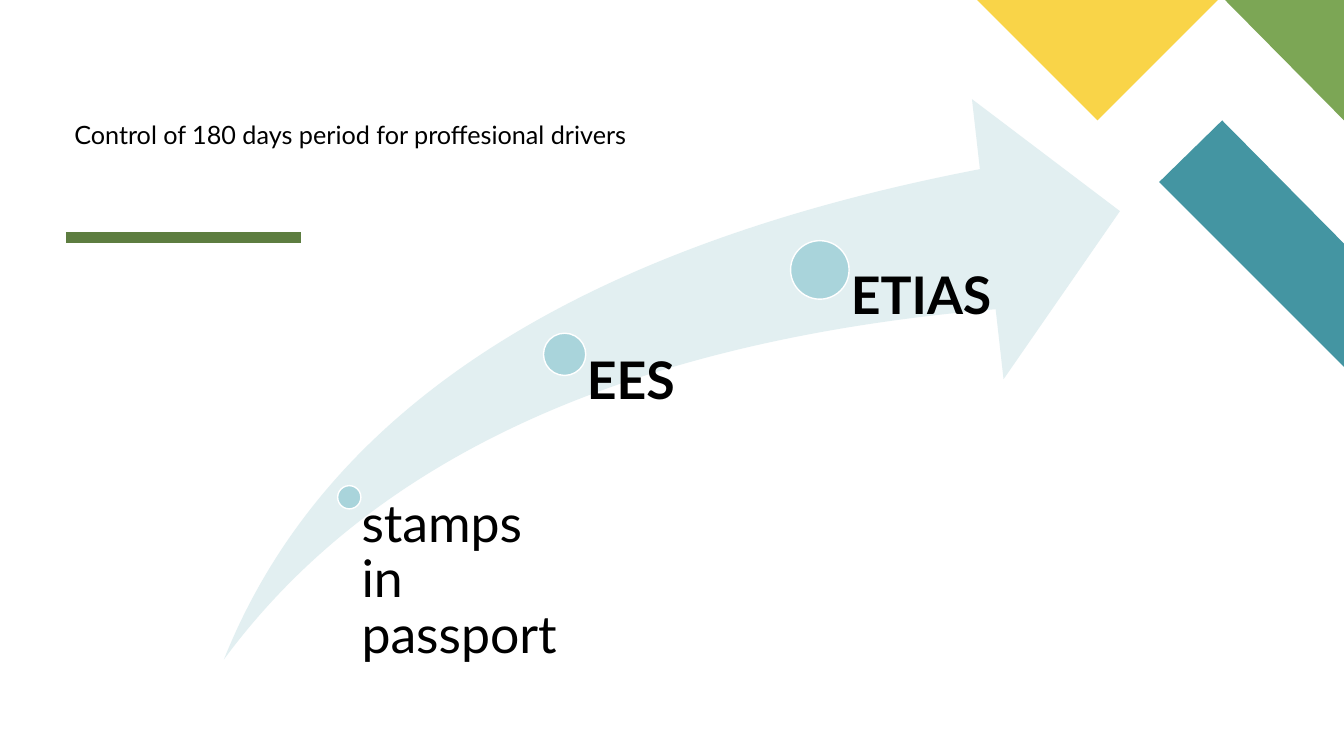
"""Build the slide on the control of the 180 days period for drivers."""
from lxml import etree
from pptx import Presentation
from pptx.dml.color import RGBColor
from pptx.enum.shapes import MSO_CONNECTOR, MSO_SHAPE
from pptx.enum.text import MSO_ANCHOR, MSO_AUTO_SIZE
from pptx.oxml.ns import qn
from pptx.util import Pt

STRAIGHT = MSO_CONNECTOR.STRAIGHT
OVAL = MSO_SHAPE.OVAL
SWOOSH = MSO_SHAPE.SWOOSH_ARROW
TOP = MSO_ANCHOR.TOP
FIT_SHAPE = MSO_AUTO_SIZE.SHAPE_TO_FIT_TEXT

BLACK = RGBColor(0x00, 0x00, 0x00)
WHITE = RGBColor(0xFF, 0xFF, 0xFF)
TEAL = RGBColor(0x44, 0x95, 0xA2)
GREEN = RGBColor(0x7C, 0xA6, 0x55)
YELLOW = RGBColor(0xF9, 0xD4, 0x48)
DARK_GREEN = RGBColor(0x5D, 0x7D, 0x40)
PALE_TEAL = RGBColor(0xE2, 0xEF, 0xF1)
LIGHT_TEAL = RGBColor(0xA9, 0xD4, 0xDB)

FONT = "Lato"
ARROW_BOTTOM = 471
CORNERS = [
    (TEAL, [(960, 262), (960, 173.5), (872.6, 86), (828.2, 130), (960, 262)]),
    (GREEN, [(960, 86), (960, 0), (874.6, 0), (960, 86)]),
    (YELLOW, [(698.4, 0), (784.4, 86), (870.4, 0), (698.4, 0)]),
]
STAGES = [
    ("stamps in passport", 249.5, 355.2, 16.6, 149, False),
    ("EES", 403.3, 253.1, 30.2, 153.4, True),
    ("ETIAS", 585.6, 192.8, 41.8, 153.4, True),
]


def paint(sp, fill, line=None):
    """Set the fill and outline of a shape and remove its shadow."""
    sp.shadow.inherit = False
    sp.fill.solid()
    sp.fill.fore_color.rgb = fill
    if line is None:
        sp.line.fill.background()
    else:
        sp.line.color.rgb = line
        sp.line.width = Pt(1)


def add_polygon(s, points, fill):
    """Add a closed outline through the given points."""
    builder = s.shapes.build_freeform(*points[0], scale=Pt(1))
    builder.add_line_segments(points[1:], close=True)
    paint(builder.convert_to_shape(), fill)


def add_shape(s, kind, left, top, width, height, fill, line=None):
    """Add a painted preset shape."""
    sp = s.shapes.add_shape(kind, Pt(left), Pt(top), Pt(width), Pt(height))
    paint(sp, fill, line)
    return sp


def add_rule(s, x1, x2, y):
    """Add the thick horizontal rule under the title."""
    rule = s.shapes.add_connector(STRAIGHT, Pt(x1), Pt(y), Pt(x2), Pt(y))
    rule.line.color.rgb = DARK_GREEN
    rule.line.width = Pt(8)
    etree.SubElement(rule._element.spPr, qn("a:effectLst"))


def add_text(s, text, left, top, width, height, size, bold=False):
    """Add a wrapping text box with one run and return its frame."""
    sp = s.shapes.add_textbox(Pt(left), Pt(top), Pt(width), Pt(height))
    tf = sp.text_frame
    tf.word_wrap = True
    tf.vertical_anchor = TOP
    r = tf.paragraphs[0].add_run()
    r.text = text
    r.font.name = FONT
    r.font.size = Pt(size)
    r.font.bold = bold
    r.font.color.rgb = BLACK
    return tf


def add_stage(s, label, x, y, diameter, width, bold):
    """Add a dot centred at x, y and a label hanging from its centre."""
    radius = diameter / 2
    add_shape(s, OVAL, x - radius, y - radius, diameter, diameter, LIGHT_TEAL, WHITE)
    tf = add_text(s, label, x, y, width, ARROW_BOTTOM - y, 37, bold)
    tf.margin_left = Pt(round(diameter * 0.53, 1))
    tf.margin_top = tf.margin_right = tf.margin_bottom = 0
    tf.paragraphs[0].line_spacing = 0.9


def main():
    """Build and save the slide."""
    prs = Presentation()
    prs.slide_width, prs.slide_height = Pt(960), Pt(540)
    s = prs.slides.add_slide(prs.slide_layouts[6])
    for fill, points in CORNERS:
        add_polygon(s, points, fill)
    add_rule(s, 47, 214.7, 169.4)
    title = "Control of 180 days period for proffesional drivers"
    add_text(s, title, 46, 81.4, 467.3, 28.8, 18).auto_size = FIT_SHAPE
    arrow = add_shape(s, SWOOSH, 160, 70.8, 640, 400.2, PALE_TEAL)
    arrow.adjustments[0] = arrow.adjustments[1] = 0.25
    for stage in STAGES:
        add_stage(s, *stage)
    prs.save("out.pptx")


if __name__ == "__main__":
    main()
